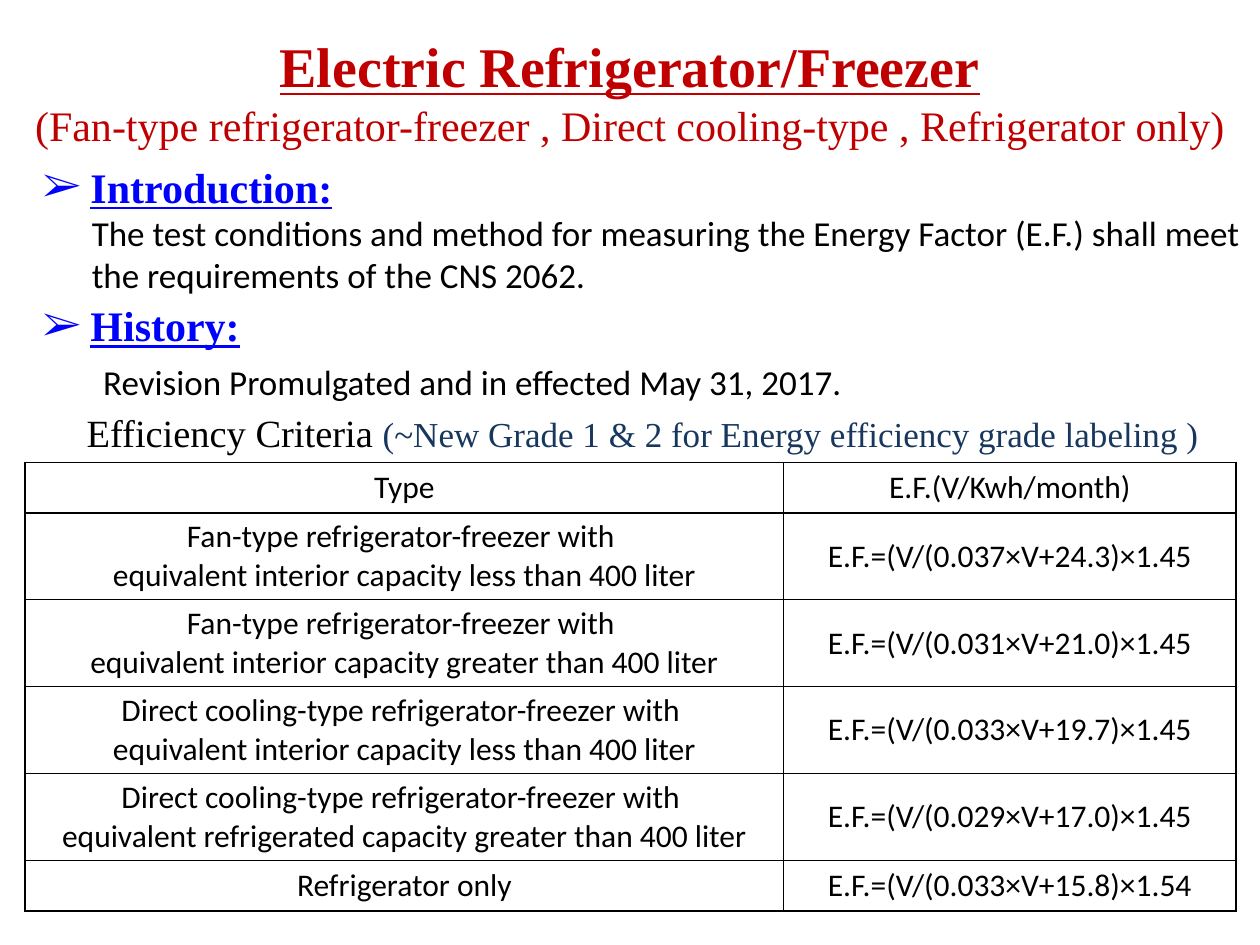
from dataclasses import dataclass
from typing import Optional

from lxml import etree
from pptx import Presentation
from pptx import util as u
from pptx.dml.color import RGBColor
from pptx.enum import text
from pptx.oxml import ns

COLORS = {"red": "C00000", "blue": "0000FF", "black": "000000", "navy": "17375E"}
SERIF, SANS = "Times New Roman", "Calibri"


@dataclass(frozen=True)
class Style:
    name: str
    size: float
    color: str
    bold: bool = False
    underline: bool = False


@dataclass(frozen=True)
class Line:
    spans: tuple  # (wording, Style) pairs
    centered: bool = False
    before: float = 0
    indent: float = 0
    bullet: Optional[str] = None


TITLE = Style(SERIF, 32, "red", True, True)
SUBTITLE = Style(SERIF, 24, "red")
HEADING = Style(SERIF, 24, "blue", True, True)
BODY = Style(SANS, 20, "black")
CRITERIA = Style(SERIF, 22, "black")
REMARK = Style(SERIF, 20, "navy")
CELL = Style(SANS, 18, "black")


def add_span(para, wording: str, style: Style) -> None:
    span = para.add_run()
    span.text = wording
    values = {"name": style.name, "size": u.Pt(style.size),
              "bold": style.bold, "underline": style.underline}
    for key, value in values.items():
        setattr(span.font, key, value)
    span.font.color.rgb = RGBColor.from_string(COLORS[style.color])


def fill_frame(frame, lines: list[Line]) -> None:
    for index, line in enumerate(lines):
        para = frame.add_paragraph() if index else frame.paragraphs[0]
        para.alignment = text.PP_ALIGN.CENTER if line.centered else text.PP_ALIGN.LEFT
        para.space_before = u.Pt(line.before)
        props = para._p.get_or_add_pPr()
        if line.indent:
            props.set("marL", str(u.Inches(line.indent)))
        if line.bullet:
            props.set("indent", str(u.Inches(-line.indent)))
            etree.SubElement(props, ns.qn("a:buFont"), typeface=SERIF)
            etree.SubElement(props, ns.qn("a:buChar"), char=line.bullet)
        for wording, style in line.spans:
            for part_index, part in enumerate(wording.split("\n")):
                if part_index:
                    para.add_line_break()
                add_span(para, part, style)


def add_text(page, left: float, top: float, width: float, height: float,
             lines: list[Line], anchor=text.MSO_ANCHOR.TOP) -> None:
    box = page.shapes.add_textbox(*map(u.Inches, (left, top, width, height)))
    box.text_frame.word_wrap = True
    box.text_frame.vertical_anchor = anchor
    fill_frame(box.text_frame, lines)


def heading(wording: str) -> Line:
    return Line(((wording, HEADING),), indent=0.38, bullet="➢")


def add_borders(cell) -> None:
    props = cell._tc.get_or_add_tcPr()
    for side in ("lnL", "lnR", "lnT", "lnB"):
        border = etree.SubElement(props, ns.qn(f"a:{side}"), w=str(u.Pt(1)))
        solid = etree.SubElement(border, ns.qn("a:solidFill"))
        etree.SubElement(solid, ns.qn("a:srgbClr"), val=COLORS["black"])


def add_grid(page, left: float, top: float, widths: list[float],
             rows: list[tuple[str, str]]) -> None:
    heights = [0.69 if "\n" in row[0] else 0.4 for row in rows]
    frame = page.shapes.add_table(
        len(rows), len(widths),
        *map(u.Inches, (left, top, sum(widths), sum(heights))))
    grid = frame.table
    grid.first_row = grid.horz_banding = False
    for column, width in zip(grid.columns, widths):
        column.width = u.Inches(width)
    for row_index, (row, height) in enumerate(zip(rows, heights)):
        grid.rows[row_index].height = u.Inches(height)
        for column_index, wording in enumerate(row):
            cell = grid.cell(row_index, column_index)
            cell.vertical_anchor = text.MSO_ANCHOR.MIDDLE
            cell.margin_top = cell.margin_bottom = u.Inches(0.04)
            add_borders(cell)
            cell.fill.background()
            fill_frame(cell.text_frame, [Line(((wording, CELL),), centered=True)])


def main() -> None:
    deck = Presentation()
    deck.slide_width, deck.slide_height = u.Inches(10), u.Inches(7.5)
    page = deck.slides.add_slide(deck.slide_layouts[6])

    # Title
    add_text(page, 0, 0.21, 10, 1.02, [
        Line((("Electric Refrigerator/Freezer", TITLE),), centered=True),
        Line((("(Fan-type refrigerator-freezer , Direct cooling-type , "
               "Refrigerator only)", SUBTITLE),), centered=True),
    ], text.MSO_ANCHOR.MIDDLE)

    # Introduction and history
    add_text(page, 0.24, 1.23, 9.76, 1.18, [
        heading("Introduction:"),
        Line((("The test conditions and method for measuring the Energy Factor "
               "(E.F.) shall meet the requirements of the CNS 2062.", BODY),),
             indent=0.39)])
    add_text(page, 0.24, 2.33, 9.13, 0.93, [
        heading("History:"),
        Line((("Revision Promulgated and in effected May 31, 2017.", BODY),),
             before=6, indent=0.48)])

    # Efficiency criteria
    add_text(page, 0.59, 3.2, 9.06, 0.47, [
        Line((("Efficiency Criteria ", CRITERIA),
              ("(~New Grade 1 & 2 for Energy efficiency grade labeling )", REMARK)))])
    fan = "Fan-type refrigerator-freezer with \nequivalent interior capacity "
    direct = "Direct cooling-type refrigerator-freezer with \nequivalent "
    add_grid(page, 0.2, 3.67, [6.02, 3.59], [
        ("Type", "E.F.(V/Kwh/month)"),
        (fan + "less than 400 liter", "E.F.=(V/(0.037×V+24.3)×1.45"),
        (fan + "greater than 400 liter", "E.F.=(V/(0.031×V+21.0)×1.45"),
        (direct + "interior capacity less than 400 liter",
         "E.F.=(V/(0.033×V+19.7)×1.45"),
        (direct + "refrigerated capacity greater than 400 liter",
         "E.F.=(V/(0.029×V+17.0)×1.45"),
        ("Refrigerator only", "E.F.=(V/(0.033×V+15.8)×1.54")])

    deck.save("out.pptx")


if __name__ == "__main__":
    main()
